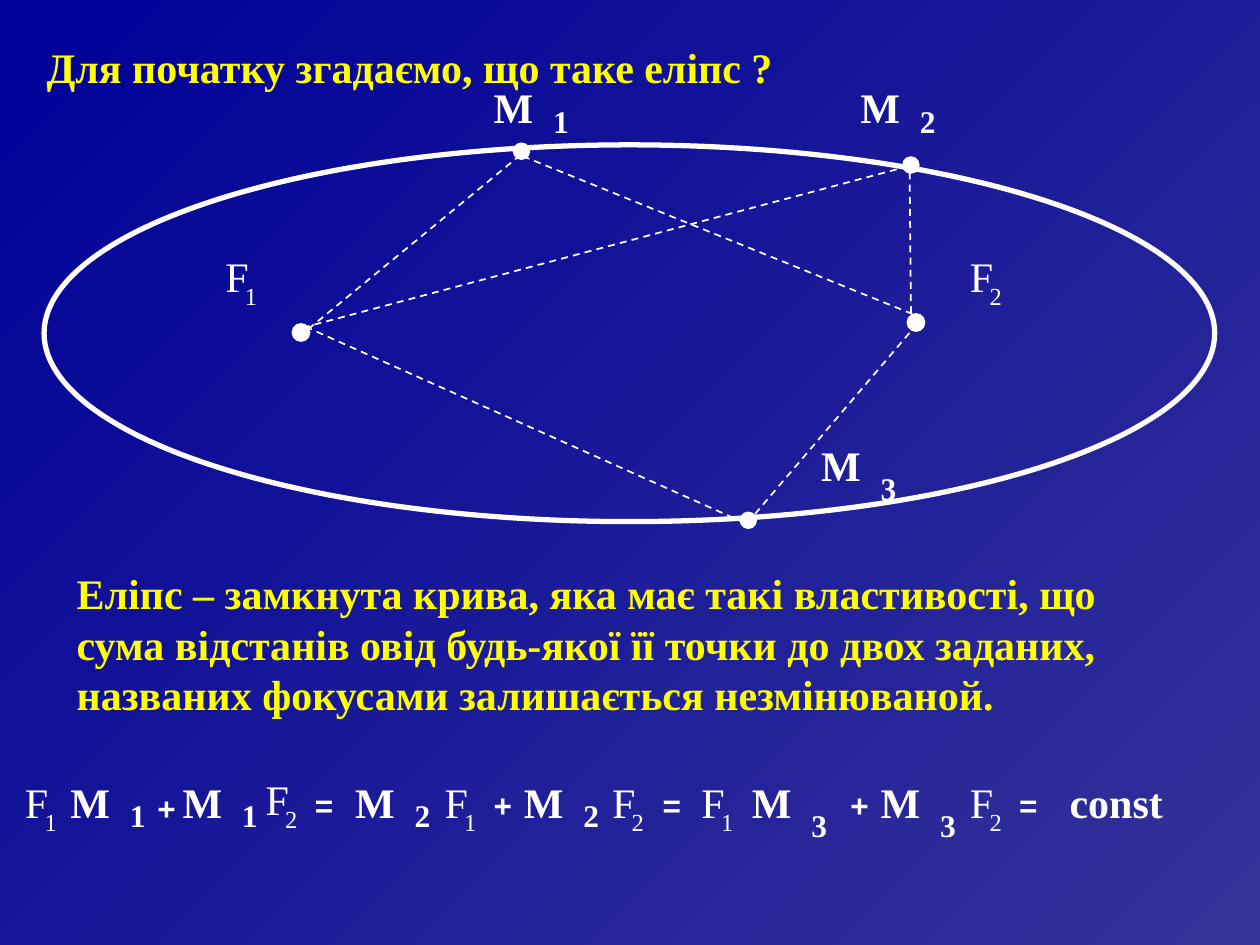
import pptx
import pptx.util
import pptx.dml.color
import pptx.enum.dml
import pptx.enum.shapes
import pptx.enum.text
import pptx.oxml
import pptx.oxml.ns

Pt = pptx.util.Pt
RGBColor = pptx.dml.color.RGBColor
MSO_SHAPE = pptx.enum.shapes.MSO_SHAPE

WHITE = RGBColor(0xFF, 0xFF, 0xFF)
YELLOW = RGBColor(0xFF, 0xFF, 0x00)
NAVY = RGBColor(0x00, 0x00, 0x99)
INDIGO = RGBColor(0x33, 0x33, 0x99)

SERIF = "Times New Roman"
HEADING = {"size": Pt(24), "name": SERIF, "bold": True}
FOCUS = {"size": Pt(24), "name": SERIF, "bold": False}
FOCUS_INDEX = {"size": Pt(14), "name": SERIF, "bold": False}
POINT_INDEX = {"size": Pt(18), "name": SERIF, "bold": True}
OPERATOR = {"size": Pt(18), "name": "Arial", "bold": True}

NS = pptx.oxml.ns.nsdecls("a")
SPACE_BEFORE = f'<a:spcBef {NS}><a:spcPct val="50000"/></a:spcBef>'
NO_EFFECT = f"<a:effectLst {NS}/>"
TEXT_SHADOW = (
    f'<a:effectLst {NS}><a:outerShdw dist="38100" dir="2700000" algn="tl">'
    '<a:srgbClr val="000000"/></a:outerShdw></a:effectLst>'
)
DROP = {"1": 11.5, "2": 11.5, "3": 17}


def add_text(shapes, text, x, y, w, h, style, color=WHITE, shadow=False):
    tf = shapes.add_textbox(Pt(x), Pt(y), Pt(w), Pt(h)).text_frame
    tf.word_wrap = True
    tf.auto_size = pptx.enum.text.MSO_AUTO_SIZE.SHAPE_TO_FIT_TEXT
    p = tf.paragraphs[0]
    p._p.get_or_add_pPr().append(pptx.oxml.parse_xml(SPACE_BEFORE))
    r = p.add_run()
    r.text = text
    for name, value in style.items():
        setattr(r.font, name, value)
    r.font.color.rgb = color
    if shadow:
        fill = r._r.rPr.find(pptx.oxml.ns.qn("a:solidFill"))
        fill.addnext(pptx.oxml.parse_xml(TEXT_SHADOW))


def add_symbol(shapes, symbol, x, y):
    letter, index = symbol
    if letter == "F":
        add_text(shapes, letter, x, y, 28, 36, FOCUS)
        add_text(shapes, index, x + 11.2, y + 17.3, 28, 24, FOCUS_INDEX)
    else:
        add_text(shapes, letter, x, y, 34, 36, HEADING)
        add_text(shapes, index, x + 34, y + DROP[index], 28, 29, POINT_INDEX)


def add_dot(shapes, x, y, outlined):
    sp = shapes.add_shape(MSO_SHAPE.OVAL, Pt(x), Pt(y), Pt(10), Pt(10))
    sp.shadow.inherit = False
    sp.fill.solid()
    sp.fill.fore_color.rgb = WHITE
    if outlined:
        sp.line.color.rgb = WHITE
        sp.line.width = Pt(0.75)
    else:
        sp.line.fill.background()


def add_ray(shapes, x1, y1, x2, y2):
    ray = shapes.add_connector(
        pptx.enum.shapes.MSO_CONNECTOR.STRAIGHT, Pt(x1), Pt(y1), Pt(x2), Pt(y2)
    )
    ray.line.color.rgb = WHITE
    ray.line.width = Pt(1)
    ray.line.dash_style = pptx.enum.dml.MSO_LINE.DASH
    ray._element.spPr.append(pptx.oxml.parse_xml(NO_EFFECT))


def add_ellipse(s, x, y, w, h):
    shapes = s.shapes.add_group_shape().shapes
    sp = shapes.add_shape(MSO_SHAPE.OVAL, Pt(x), Pt(y), Pt(w), Pt(h))
    sp.shadow.inherit = False
    sp.fill.background()
    sp.line.color.rgb = WHITE
    sp.line.width = Pt(3)
    foci = [("F1", 141.8, 102.2, 96.5), ("F2", 493.2, 96.5, 522)]
    for symbol, dot_x, dot_y, label_x in foci:
        add_dot(shapes, x + dot_x, y + dot_y, True)
        add_symbol(shapes, symbol, x + label_x, y + 57)

    points = [
        ("М1", (267.8, -1.4), (249.8, -39.6),
         [(272.2, 5.8, 147.6, 108), (273.6, 6.5, 501.1, 98.6)]),
        ("М2", (490.3, 6.5), (459.4, -39.6),
         [(493.9, 12.2, 145.4, 105.1), (494.6, 15.8, 495.4, 100.8)]),
        ("М3", (397.4, 209.5), (437, 164.9),
         [(499, 102.2, 402.5, 215.3), (400.3, 216, 150.5, 104.4)]),
    ]
    for symbol, dot, label, rays in points:
        shapes = s.shapes.add_group_shape().shapes
        add_dot(shapes, x + dot[0], y + dot[1], False)
        for x1, y1, x2, y2 in rays:
            add_ray(shapes, x + x1, y + y1, x + x2, y + y2)
        add_symbol(shapes, symbol, x + label[0], y + label[1])


def add_formula(s, x, y):
    groups = [
        [("F1", 0, 0), ("М1", 25.9, 0), ("+", 75.6, 7.2), ("М1", 90, 0),
         ("F2", 137.5, -1.4)],
        [("=", 165.6, 5.8), ("М2", 188.6, 0), ("F1", 239.8, 0),
         ("+", 267.8, 5.8), ("М2", 285.1, 0), ("F2", 335.5, 0)],
        [("=", 364.3, 5.8), ("F1", 386.6, 0), ("М3", 415.4, 0),
         ("+", 471.6, 5.8), ("М3", 488.9, 0), ("F2", 540, 0)],
        [("=", 568.1, 5.8), ("const", 596.9, 0)],
    ]
    for terms in groups:
        shapes = s.shapes.add_group_shape().shapes
        for term, dx, dy in terms:
            if term in "+=":
                add_text(shapes, term, x + dx, y + dy, 23, 29, OPERATOR)
            elif term == "const":
                add_text(shapes, term, x + dx, y + dy, 73.4, 36, HEADING)
            else:
                add_symbol(shapes, term, x + dx, y + dy)


def add_background(s):
    fill = s.background.fill
    fill.gradient()
    fill.gradient_angle = 315
    for stop, position, color in zip(fill.gradient_stops, (0, 1), (NAVY, INDIGO)):
        stop.position = position
        stop.color.rgb = color


def main():
    prs = pptx.Presentation()
    prs.slide_width, prs.slide_height = Pt(720), Pt(540)
    s = prs.slides.add_slide(prs.slide_layouts[6])
    add_background(s)
    add_text(s.shapes, "Для початку згадаємо, що таке еліпс ?",
             19.5, 20.2, 646.5, 36, HEADING, YELLOW, True)
    add_text(s.shapes,
             "Еліпс – замкнута крива, яка має такі властивості, що сума "
             "відстанів овід будь-якої її точки до двох заданих, названих "
             "фокусами залишається незмінюваной.",
             36.7, 321, 646.5, 94.3, HEADING, YELLOW, True)
    add_ellipse(s, 25.2, 82.8, 668.9, 215.3)
    add_formula(s, 7.2, 440)
    prs.save("out.pptx")


if __name__ == "__main__":
    main()
